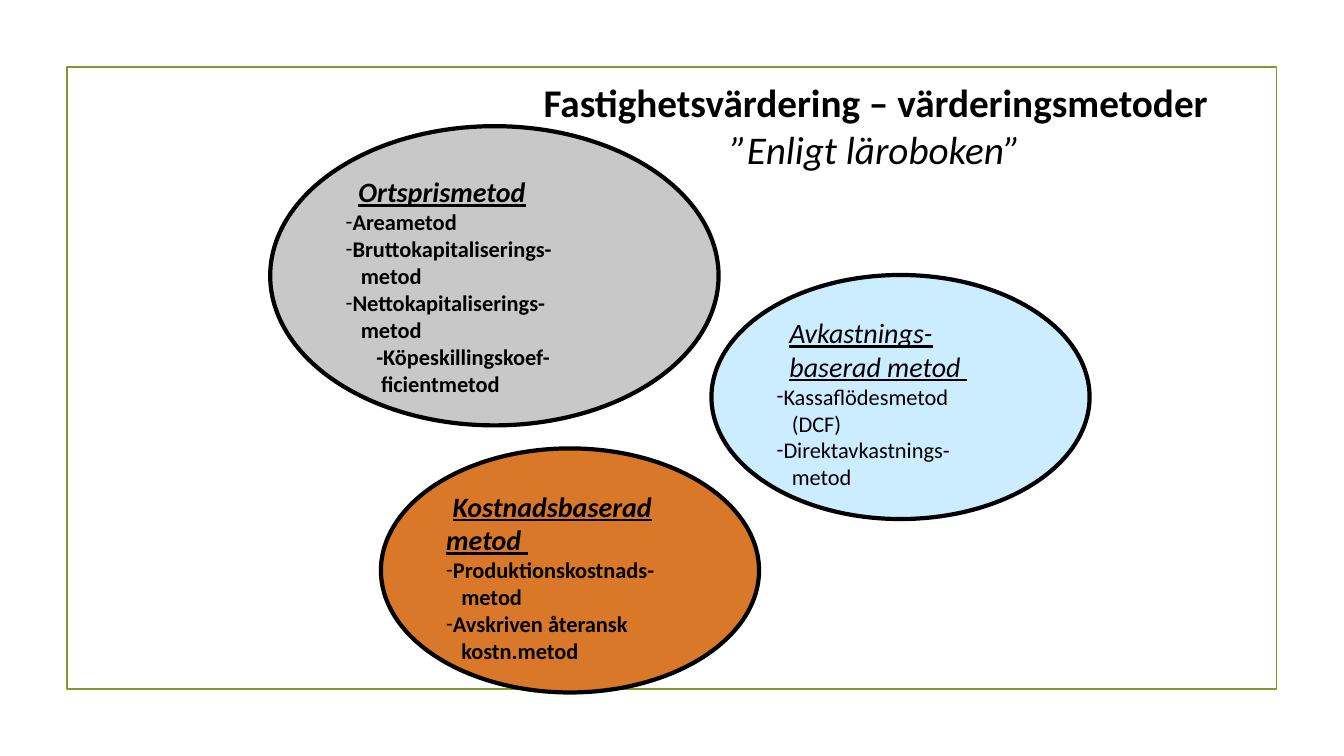
from lxml.etree import SubElement
from pptx import Presentation
from pptx.dml.color import RGBColor
from pptx.enum.shapes import MSO_SHAPE as Shape
from pptx.enum.text import MSO_ANCHOR as Anchor, PP_ALIGN as Align
from pptx.oxml.ns import qn
from pptx.util import Cm, Pt

BLACK = RGBColor(0x00, 0x00, 0x00)
OLIVE = RGBColor(0x83, 0x99, 0x2A)
GREY = RGBColor(0xC8, 0xC8, 0xC8)
SKY = RGBColor(0xCC, 0xEC, 0xFF)
ORANGE = RGBColor(0xD9, 0x78, 0x28)
FONT = "Calibri"

# Content: heading and item lines are (indent in cm, text); "-" marks a bullet
HEADLINE = "Fastighetsvärdering – värderingsmetoder"
SUBTITLE = "”Enligt läroboken”"
METHODS = [
    {"box": (6.81, 3.18, 11.3, 7.54), "fill": GREY, "bold": True,
     "heading": [(0.32, "Ortsprismetod")],
     "items": [("-", "Areametod"),
               ("-", "Bruttokapitaliserings-"), (0.38, "metod"),
               ("-", "Nettokapitaliserings-"), (0.38, "metod"),
               (0.77, "-Köpeskillingskoef-"), (0.89, "ficientmetod")]},
    {"box": (17.93, 6.93, 9.53, 6.15), "fill": SKY, "bold": False,
     "heading": [(0.32, "Avkastnings-"), (0.32, "baserad metod ")],
     "items": [("-", "Kassaflödesmetod"), (0.38, "(DCF)"),
               ("-", "Direktavkastnings-"), (0.38, "metod")]},
    {"box": (9.6, 11.3, 9.53, 6.15), "fill": ORANGE, "bold": True,
     "heading": [(0.16, "Kostnadsbaserad"), (0, "metod ")],
     "items": [("-", "Produktionskostnads-"), (0.38, "metod"),
               ("-", "Avskriven återansk"), (0.38, "kostn.metod")]},
]


def add_line(frame, text, size, bold=False, italic=False, underline=False,
             align=Align.LEFT, indent=0):
    """Fill the empty first paragraph, or append one."""
    first = frame.paragraphs[0]
    line = first if not first.runs else frame.add_paragraph()
    line.alignment = align
    props = line._p.get_or_add_pPr()
    bulleted = indent == "-"
    props.set("marL", str(0 if bulleted else Cm(indent)))
    props.set("indent", "0")
    if bulleted:
        SubElement(props, qn("a:buFont"), typeface=FONT)
        SubElement(props, qn("a:buChar"), char="-")
    else:
        SubElement(props, qn("a:buNone"))
    run = line.add_run()
    run.text = text
    font = run.font
    font.name, font.size = FONT, Pt(size)
    font.bold, font.italic, font.underline = bold, italic, underline
    font.color.rgb = BLACK


def add_outlined(slide, kind, box, color, width, fill=None):
    shape = slide.shapes.add_shape(kind, *map(Cm, box))
    shape.shadow.inherit = False
    if fill is None:
        shape.fill.background()
    else:
        shape.fill.solid()
        shape.fill.fore_color.rgb = fill
    shape.line.color.rgb = color
    shape.line.width = Pt(width)
    return shape


def main():
    deck = Presentation()
    deck.slide_width, deck.slide_height = Cm(33.87), Cm(19.05)
    slide = deck.slides.add_slide(deck.slide_layouts[6])

    # Frame
    add_outlined(slide, Shape.RECTANGLE, (1.69, 1.69, 30.48, 15.67), OLIVE, 1.25)

    # Title
    title = slide.shapes.add_textbox(Cm(13.34), Cm(1.85), Cm(17.45), Cm(2.64)).text_frame
    title.word_wrap = False
    add_line(title, HEADLINE, 28, bold=True, align=Align.CENTER)
    add_line(title, SUBTITLE, 28, italic=True, align=Align.CENTER)

    # Method ellipses
    for method in METHODS:
        ellipse = add_outlined(slide, Shape.OVAL, method["box"], BLACK, 3, method["fill"])
        frame = ellipse.text_frame
        frame.word_wrap = True
        frame.vertical_anchor = Anchor.TOP
        for indent, text in method["heading"]:
            add_line(frame, text, 20, method["bold"], italic=True,
                     underline=True, indent=indent)
        for indent, text in method["items"]:
            add_line(frame, text, 16, method["bold"], indent=indent)

    deck.save("out.pptx")


if __name__ == "__main__":
    main()
